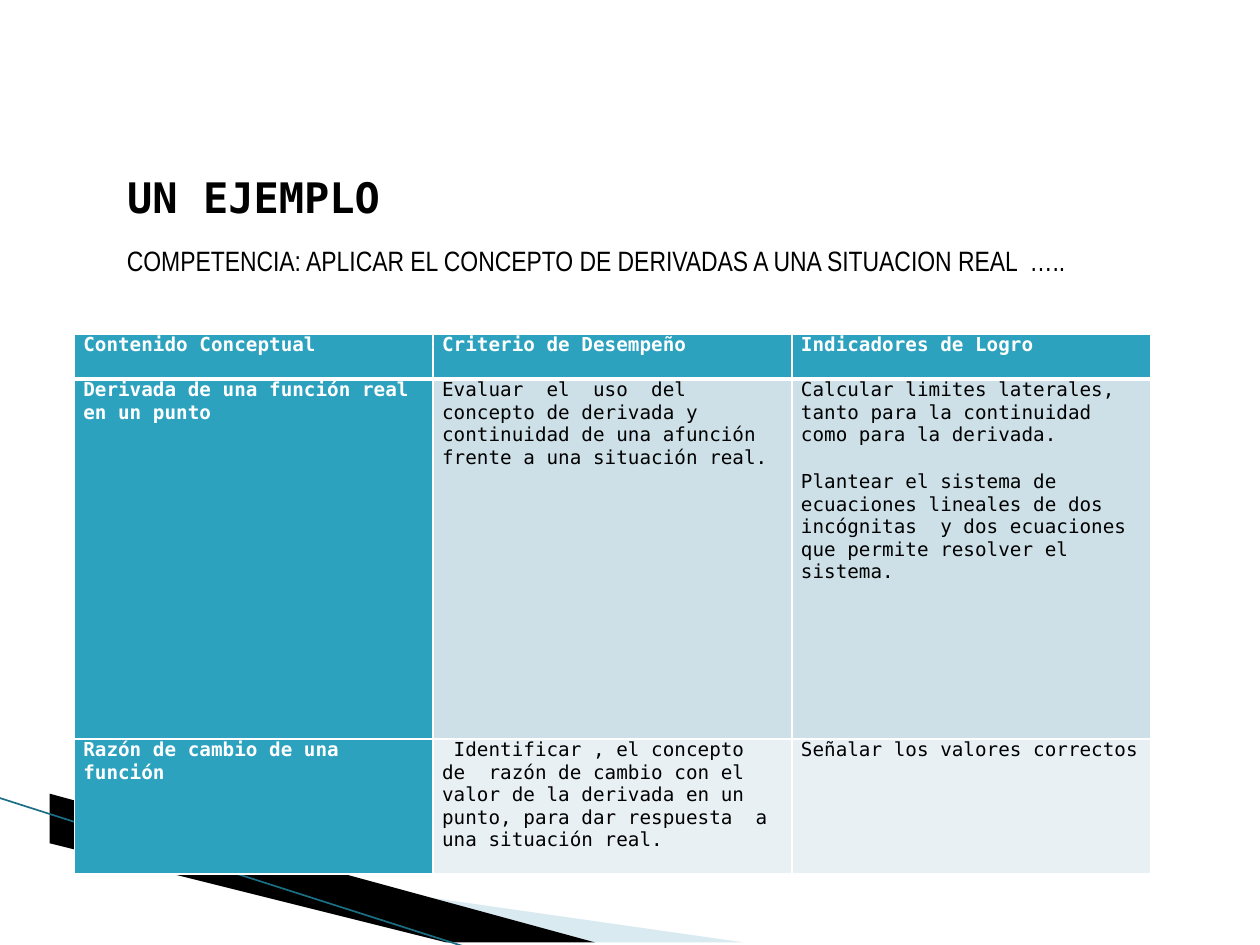
from lxml import etree
from pptx import Presentation
from pptx.dml.color import RGBColor
from pptx.enum.shapes import MSO_CONNECTOR
from pptx.enum.text import MSO_ANCHOR, MSO_AUTO_SIZE, PP_ALIGN
from pptx.oxml.ns import qn
from pptx.util import Cm, Pt

STRAIGHT = MSO_CONNECTOR.STRAIGHT
TOP, MIDDLE = MSO_ANCHOR.TOP, MSO_ANCHOR.MIDDLE
LEFT = PP_ALIGN.LEFT
NO_AUTOFIT = MSO_AUTO_SIZE.NONE

BLACK = RGBColor(0x00, 0x00, 0x00)
WHITE = RGBColor(0xFF, 0xFF, 0xFF)
TEAL = RGBColor(0x2D, 0xA2, 0xBF)
DARK_TEAL = RGBColor(0x1B, 0x6F, 0x84)
SKY = RGBColor(0xA0, 0xCB, 0xDC)
BAND_COLORS = (RGBColor(0xCD, 0xE0, 0xE8), RGBColor(0xE8, 0xF0, 0xF4))

MONO = "DejaVu Sans Mono"
NARROW = "Arial Narrow"
TITLE_ONLY_LAYOUT = 5
ROW_HEIGHTS = (0.91, 7.26, 2.72)

COMPETENCY_ROWS = (
    ("Contenido Conceptual", "Criterio de Desempeño", "Indicadores de Logro"),
    (
        "Derivada de una función real en un punto",
        "Evaluar  el  uso  del concepto de derivada y continuidad de una "
        "afunción  frente a una situación real.",
        "Calcular limites laterales, tanto para la continuidad como para la "
        "derivada.\nPlantear el sistema de ecuaciones lineales de dos "
        "incógnitas  y dos ecuaciones que permite resolver el sistema.",
    ),
    (
        "Razón de cambio de una función",
        " Identificar , el concepto  de  razón de cambio con el valor de la "
        "derivada en un punto, para dar respuesta  a una situación real.",
        "Señalar los valores correctos",
    ),
)


def format_runs(paragraph, font_name, size, color, bold=False):
    for run in paragraph.runs:
        run.font.name = font_name
        run.font.size = Pt(size)
        run.font.color.rgb = color
        run.font.bold = bold


def add_wedge(slide, left, top, points, color):
    corners = [(left + x, top + y) for x, y in points]
    builder = slide.shapes.build_freeform(*corners[0], scale=Cm(1))
    builder.add_line_segments(corners[1:], close=True)
    wedge = builder.convert_to_shape()
    wedge.shadow.inherit = False
    wedge.fill.solid()
    wedge.fill.fore_color.rgb = color
    wedge.line.fill.background()
    return wedge


def add_corner_decoration(slide, left, top):
    # Pale translucent wedge
    pale = add_wedge(slide, left, top,
                     [(1.4, 0.54), (15.11, 3.08), (11.58, 3.08), (1.4, 0.51)], SKY)
    pale_color = pale.fill._xPr.find(qn("a:solidFill"))[0]
    etree.SubElement(pale_color, qn("a:alpha"), val="40000")

    # Black wedge
    add_wedge(slide, left, top,
              [(1.35, 0.48), (11.61, 3.08), (9.45, 3.1), (1.37, 0.51)], BLACK)

    # Thin edge line
    edge = slide.shapes.add_connector(
        STRAIGHT, Cm(left - 0.03), Cm(top + 0.08), Cm(left + 9.42), Cm(top + 3.1))
    edge.line.color.rgb = DARK_TEAL
    edge.line.width = Pt(0.95)
    etree.SubElement(edge._element.spPr, qn("a:effectLst"))


def add_heading(slide, left, top, width):
    # Title
    title = slide.shapes.title
    title.left, title.top, title.width, title.height = (
        Cm(left), Cm(top), Cm(5.8), Cm(1.28))
    title_frame = title.text_frame
    title_frame.text = "UN EJEMPLO"
    title_frame.word_wrap = False
    title_frame.auto_size = NO_AUTOFIT
    title_frame.vertical_anchor = TOP
    title_frame.paragraphs[0].alignment = LEFT
    format_runs(title_frame.paragraphs[0], MONO, 24, BLACK, True)

    # Competency statement
    competency = slide.shapes.add_textbox(
        Cm(left), Cm(top + 1.45), Cm(width), Cm(0.94))
    competency_frame = competency.text_frame
    competency_frame.word_wrap = True
    competency_frame.vertical_anchor = MIDDLE
    competency_frame.text = (
        "COMPETENCIA: APLICAR EL CONCEPTO DE DERIVADAS A UNA SITUACION REAL  …..")
    format_runs(competency_frame.paragraphs[0], NARROW, 16, BLACK)


def set_borders(cell, widths):
    properties = cell._tc.get_or_add_tcPr()
    for position, (side, width) in enumerate(widths.items()):
        border = etree.Element(qn(f"a:ln{side}"), w=str(Pt(width)))
        fill = etree.SubElement(border, qn("a:solidFill"))
        etree.SubElement(fill, qn("a:srgbClr"), val=str(WHITE))
        properties.insert(position, border)


def fill_cell(cell, text, row, column):
    is_heading = row == 0 or column == 0
    cell.margin_left = cell.margin_right = Cm(0.18)
    cell.margin_top = cell.margin_bottom = 0
    cell.vertical_anchor = TOP
    cell.fill.solid()
    cell.fill.fore_color.rgb = TEAL if is_heading else BAND_COLORS[row - 1]
    set_borders(cell, {"L": 1, "R": 1,
                       "T": 3 if row == 1 else 1, "B": 3 if row == 0 else 1})
    cell.text_frame.text = text
    for index, paragraph in enumerate(cell.text_frame.paragraphs):
        if index:
            paragraph.space_before = Pt(14)
        format_runs(paragraph, MONO, 11, WHITE if is_heading else BLACK, is_heading)


def add_competency_table(slide, left, top, width):
    column_count = len(COMPETENCY_ROWS[0])
    table = slide.shapes.add_table(
        len(COMPETENCY_ROWS), column_count,
        Cm(left), Cm(top), Cm(width), Cm(sum(ROW_HEIGHTS))).table
    for column in table.columns:
        column.width = Cm(width / column_count)
    for row, texts in enumerate(COMPETENCY_ROWS):
        table.rows[row].height = Cm(ROW_HEIGHTS[row])
        for column, text in enumerate(texts):
            fill_cell(table.cell(row, column), text, row, column)


def main():
    presentation = Presentation()
    presentation.slide_width = Cm(25.4)
    presentation.slide_height = Cm(19.05)
    slide = presentation.slides.add_slide(
        presentation.slide_layouts[TITLE_ONLY_LAYOUT])

    add_corner_decoration(slide, 0, 16)
    add_heading(slide, 2.31, 3.33, 21.41)
    add_competency_table(slide, 1.5, 6.73, 21.7)

    presentation.save("out.pptx")


if __name__ == "__main__":
    main()
